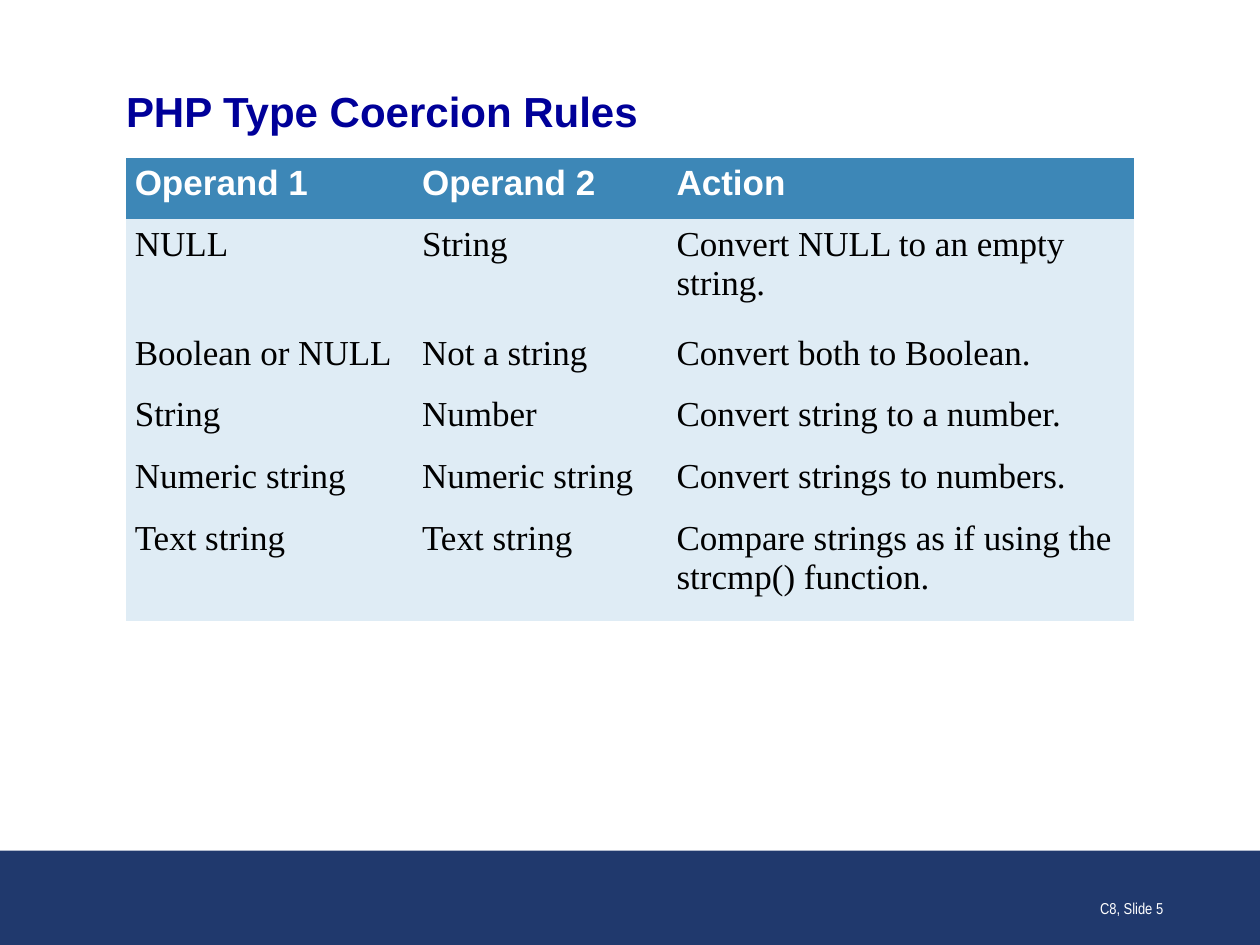
from pptx import Presentation
from pptx.dml.color import RGBColor
from pptx.enum.shapes import MSO_SHAPE
from pptx.enum.text import MSO_ANCHOR, MSO_AUTO_SIZE, PP_ALIGN
from pptx.oxml.ns import qn
from pptx.util import Inches, Pt

RECT = MSO_SHAPE.RECTANGLE
MIDDLE, BOTTOM = MSO_ANCHOR.MIDDLE, MSO_ANCHOR.BOTTOM
LEFT, RIGHT = PP_ALIGN.LEFT, PP_ALIGN.RIGHT
FIXED = MSO_AUTO_SIZE.NONE

TITLE = "PHP Type Coercion Rules"
FOOTER = "C8, Slide 5"
RULES = [
    ("Operand 1", "Operand 2", "Action"),
    ("NULL", "String", "Convert NULL to an empty string."),
    ("Boolean or NULL", "Not a string", "Convert both to Boolean."),
    ("String", "Number", "Convert string to a number."),
    ("Numeric string", "Numeric string", "Convert strings to numbers."),
    ("Text string", "Text string",
     "Compare strings as if using the strcmp() function."),
]
WIDTHS = [2.28, 2.02, 3.7]
HEIGHTS = [0.49, 0.86, 0.49, 0.49, 0.49, 0.86]
COLORS = {"band": "20396D", "title": "000099", "head": "3D87B7",
          "body": "DFECF5", "white": "FFFFFF", "black": "000000"}
NO_STYLE = "{2D5ABB26-0587-4C30-8999-92F81FD0307C}"


def paint(fill, color):
    fill.solid()
    fill.fore_color.rgb = RGBColor.from_string(COLORS[color])


def style(para, face, size, color, bold=False, align=LEFT):
    para.alignment = align
    font = para.font
    font.name, font.size, font.bold = face, Pt(size), bold
    font.color.rgb = RGBColor.from_string(COLORS[color])


def place(shape, left, top, width, height):
    shape.left, shape.top = Inches(left), Inches(top)
    shape.width, shape.height = Inches(width), Inches(height)


def add_title(slide):
    title = slide.shapes.title
    place(title, 1, 0.68, 8, 0.4)
    frame = title.text_frame
    frame.text = TITLE
    frame.auto_size = FIXED
    frame.vertical_anchor = MIDDLE
    frame.margin_left = frame.margin_right = 0
    frame.margin_top = frame.margin_bottom = 0
    style(frame.paragraphs[0], "Arial", 24, "title", True)


def add_rules(slide):
    table = slide.shapes.add_table(
        len(RULES), len(WIDTHS), Inches(1), Inches(1.25),
        Inches(sum(WIDTHS)), Inches(sum(HEIGHTS))).table
    table._tbl.tblPr.find(qn("a:tableStyleId")).text = NO_STYLE
    table.horz_banding = False
    for col, width in zip(table.columns, WIDTHS):
        col.width = Inches(width)
    for r, texts in enumerate(RULES):
        table.rows[r].height = Inches(HEIGHTS[r])
        for c, text in enumerate(texts):
            cell = table.cell(r, c)
            cell.text = text
            cell.margin_left = cell.margin_right = Inches(0.07)
            paint(cell.fill, "body" if r else "head")
            para = cell.text_frame.paragraphs[0]
            para.space_after = Pt(9 if r == len(RULES) - 1 else 6)
            if r:
                style(para, "Times New Roman", 20, "black")
            else:
                style(para, "Arial", 20, "white", True)


def add_footer(slide):
    band = slide.shapes.add_shape(
        RECT, 0, Inches(6.75), Inches(10), Inches(0.75))
    band.shadow.inherit = False
    paint(band.fill, "band")
    band.line.fill.background()
    box = slide.shapes.add_textbox(
        Inches(7.25), Inches(6.83), Inches(2.08), Inches(0.5))
    frame = box.text_frame
    frame.word_wrap = True
    frame.vertical_anchor = BOTTOM
    frame.text = FOOTER
    style(frame.paragraphs[0], "Arial Narrow", 9, "white", align=RIGHT)


def main():
    deck = Presentation()
    deck.slide_width, deck.slide_height = Inches(10), Inches(7.5)
    slide = deck.slides.add_slide(deck.slide_layouts[5])
    add_title(slide)
    add_rules(slide)
    add_footer(slide)
    deck.save("out.pptx")


if __name__ == "__main__":
    main()
